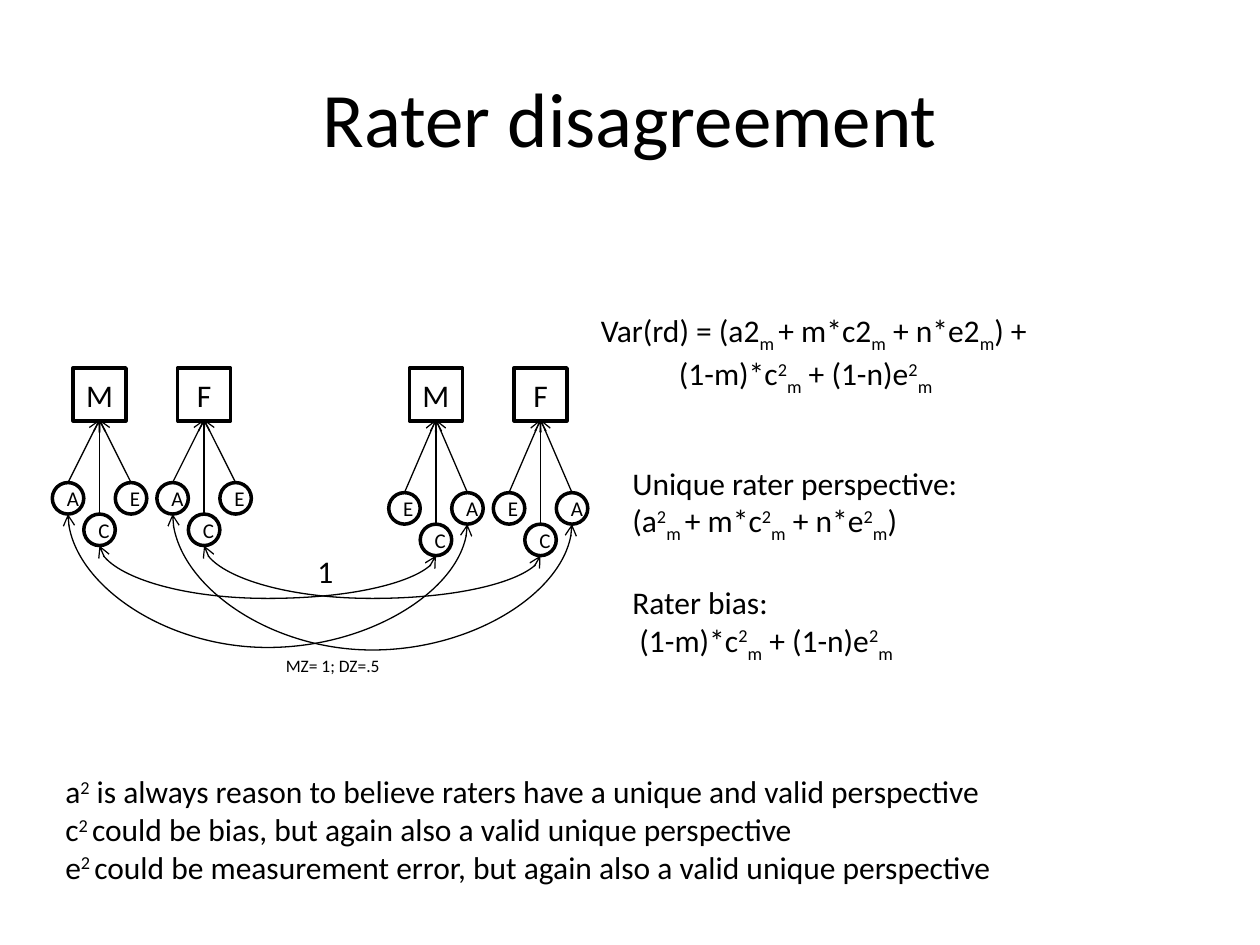
from lxml import etree
from pptx import Presentation
from pptx.dml.color import RGBColor
from pptx.enum.shapes import MSO_CONNECTOR, MSO_SHAPE
from pptx.enum.text import MSO_ANCHOR, MSO_AUTO_SIZE, PP_ALIGN
from pptx.oxml.ns import qn
from pptx.util import Inches, Pt

RECTANGLE, OVAL = MSO_SHAPE.RECTANGLE, MSO_SHAPE.OVAL
STRAIGHT, CURVE = MSO_CONNECTOR.STRAIGHT, MSO_CONNECTOR.CURVE
CENTER, LEFT = PP_ALIGN.CENTER, PP_ALIGN.LEFT
MIDDLE, TOP = MSO_ANCHOR.MIDDLE, MSO_ANCHOR.TOP
FIT_SHAPE, NO_FIT = MSO_AUTO_SIZE.SHAPE_TO_FIT_TEXT, MSO_AUTO_SIZE.NONE

COLORS = {"ink": "000000", "paper": "FFFFFF"}
BASELINES = {"^": "30000", "_": "-25000"}

SQUARE = 0.42
CIRCLE = 0.25
SPREAD = 0.25
SQUARE_TOP = 2.92
SQUARE_BOTTOM = 3.33
RATER_GAP = 0.83
TWIN_GAP = 2.67
FIRST_RATER = 0.79
TWIN_DROP = 0.08

TWINS = [
    (FIRST_RATER, 3.83, "ACE"),
    (FIRST_RATER + TWIN_GAP, 3.83 + TWIN_DROP, "ECA"),
]
CORRELATIONS = [
    (FIRST_RATER, 4.33, TWIN_GAP, 0.42),
    (FIRST_RATER + RATER_GAP, 4.33, TWIN_GAP, 0.42),
    (FIRST_RATER + RATER_GAP - SPREAD, 4.08, TWIN_GAP + 2 * SPREAD, 1.08),
    (FIRST_RATER - SPREAD, 4.08, TWIN_GAP + 2 * SPREAD, 1.06),
]

BIAS = "(1-m)*c|^2|_m| + (1-n)e|^2|_m"
TOTAL_VARIANCE = [
    ("Var(rd) = (a2|_m |+ m*c2|_m| + n*e2|_m|) +", {}),
    (BIAS, {"indent": 0.62}),
]
VARIANCE_PARTS = [
    ("Unique rater perspective:", {}),
    ("(a|^2|_m |+ m*c|^2|_m| + n*e|^2|_m|)", {}),
    ("Rater bias:", {"space_before": 22}),
    (" " + BIAS, {}),
]
CONCLUSIONS = [
    ("a|^2| is always reason to believe raters have a unique and valid perspective", {}),
    ("c|^2 |could be bias, but again also a valid unique perspective", {}),
    ("e|^2 |could be measurement error, but again also a valid unique perspective", {}),
]


def color(name):
    return RGBColor.from_string(COLORS[name])


def apply(target, values):
    for name, value in values.items():
        setattr(target, name, value)


def write_para(para, markup, size, align, indent=0, space_before=0):
    apply(para, {"alignment": align, "space_before": Pt(space_before)})
    if indent:
        para._p.get_or_add_pPr().set("marL", str(Inches(indent)))
    for piece in markup.split("|"):
        baseline = BASELINES.get(piece[0])
        span = para.add_run()
        span.text = piece[1:] if baseline else piece
        apply(span.font, {"name": "Calibri", "size": Pt(size)})
        span.font.color.rgb = color("ink")
        if baseline:
            span._r.get_or_add_rPr().set("baseline", baseline)


def add_text(page, place, lines, size, align=LEFT, anchor=TOP, wrap=False, fit=FIT_SHAPE):
    box = page.shapes.add_textbox(*map(Inches, place))
    frame = box.text_frame
    apply(frame, {"word_wrap": wrap, "auto_size": fit, "vertical_anchor": anchor})
    for index, (markup, layout) in enumerate(lines):
        para = frame.add_paragraph() if index else frame.paragraphs[0]
        write_para(para, markup, size, align, **layout)


def add_node(page, kind, center, top, side, label, size):
    node = page.shapes.add_shape(
        kind, Inches(center - side / 2), Inches(top), Inches(side), Inches(side))
    node.shadow.inherit = False
    node.fill.solid()
    node.fill.fore_color.rgb = color("paper")
    node.line.color.rgb = color("ink")
    node.line.width = Pt(2)
    node.text_frame.vertical_anchor = MIDDLE
    write_para(node.text_frame.paragraphs[0], label, size, CENTER)


def add_arrow(page, kind, start, end, arrow_ends):
    arrow = page.shapes.add_connector(kind, *map(Inches, start + end))
    arrow.line.color.rgb = color("ink")
    arrow.line.width = Pt(0.75)
    for name in arrow_ends:
        etree.SubElement(arrow.line._get_or_add_ln(), qn("a:" + name)).set("type", "arrow")
    etree.SubElement(arrow._element.spPr, qn("a:effectLst"))
    return arrow


def add_correlation(page, left, top, span, depth):
    middle_x, middle_y = left + span / 2, top + TWIN_DROP / 2
    start = (middle_x - TWIN_DROP / 2, middle_y - span / 2)
    end = (middle_x + TWIN_DROP / 2, middle_y + span / 2)
    curve = add_arrow(page, CURVE, start, end, ["headEnd", "tailEnd"])
    properties = curve._element.spPr
    frame = properties.find(qn("a:xfrm"))
    frame.set("rot", str(270 * 60000))
    frame.set("flipH", "1")
    adjustments = properties.find(qn("a:prstGeom")).find(qn("a:avLst"))
    guide = etree.SubElement(adjustments, qn("a:gd"))
    guide.set("name", "adj1")
    guide.set("fmla", f"val {round(depth / TWIN_DROP * 100000)}")


def add_rater(page, center, top, label, factors):
    add_node(page, RECTANGLE, center, SQUARE_TOP, SQUARE, label, 18)
    for step, factor in zip((-1, 0, 1), factors):
        factor_x = center + step * SPREAD
        factor_top = top if step else top + CIRCLE
        add_node(page, OVAL, factor_x, factor_top, CIRCLE, factor, 12)
        add_arrow(page, STRAIGHT, (factor_x, factor_top), (center, SQUARE_BOTTOM), ["tailEnd"])


def main():
    deck = Presentation()
    apply(deck, {"slide_width": Inches(10), "slide_height": Inches(7.5)})
    page = deck.slides.add_slide(deck.slide_layouts[6])

    add_text(page, (0.5, 0.3, 9, 1.25), [("Rater disagreement", {})], 44,
             CENTER, MIDDLE, wrap=True, fit=NO_FIT)
    for center, top, factors in TWINS:
        for index, label in enumerate("MF"):
            add_rater(page, center + index * RATER_GAP, top, label, factors)
    for correlation in CORRELATIONS:
        add_correlation(page, *correlation)

    add_text(page, (2.42, 4.33, 0.33, 0.4), [("1", {})], 18)
    add_text(page, (2.17, 5.15, 0.96, 0.27), [("MZ= 1; DZ=.5", {})], 10)
    add_text(page, (4.67, 2.42, 5, 0.71), TOTAL_VARIANCE, 18, wrap=True)
    add_text(page, (4.92, 3.63, 2.81, 1.92), VARIANCE_PARTS, 18)
    add_text(page, (0.42, 6.08, 7.66, 1.01), CONCLUSIONS, 18)
    deck.save("out.pptx")


if __name__ == "__main__":
    main()
